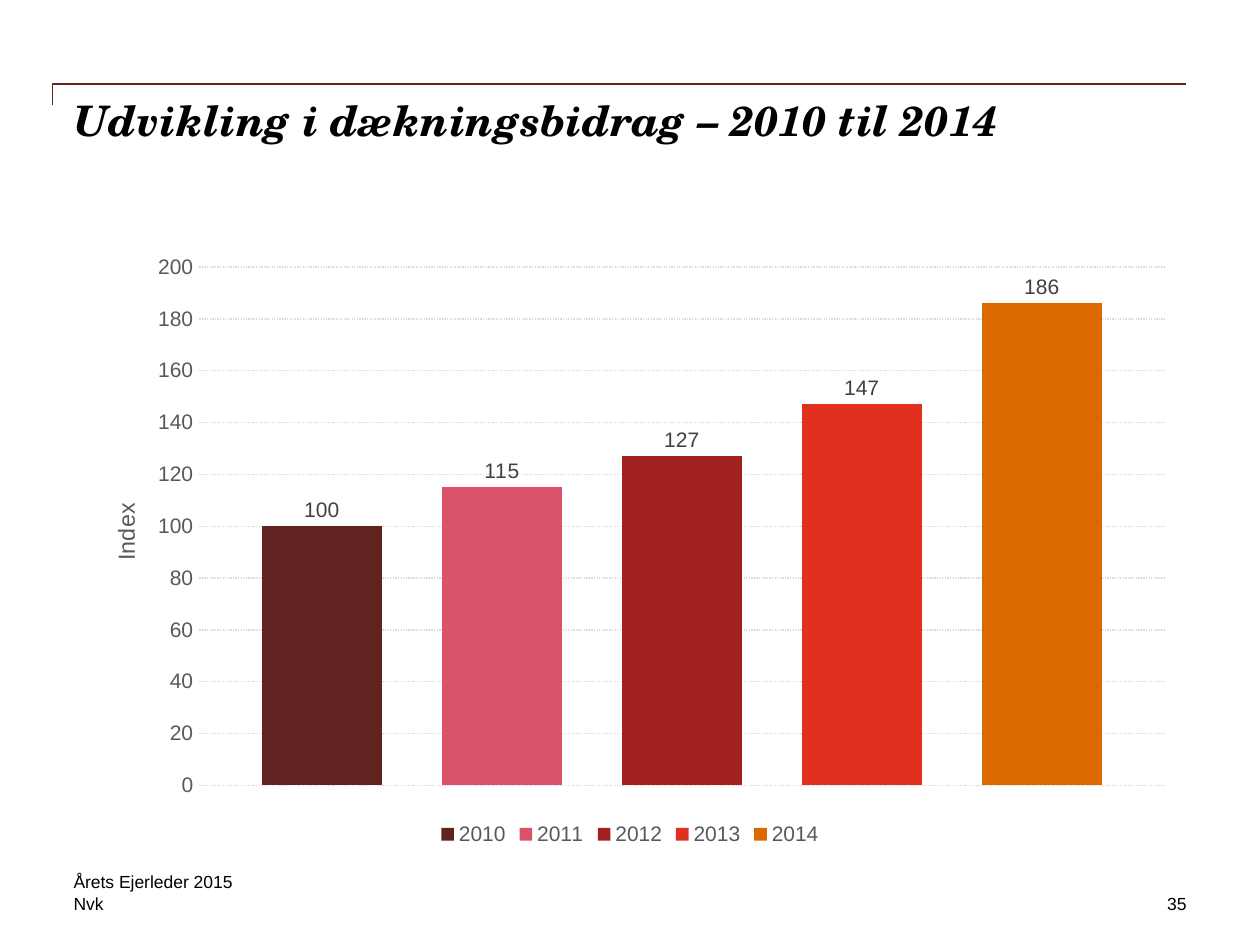
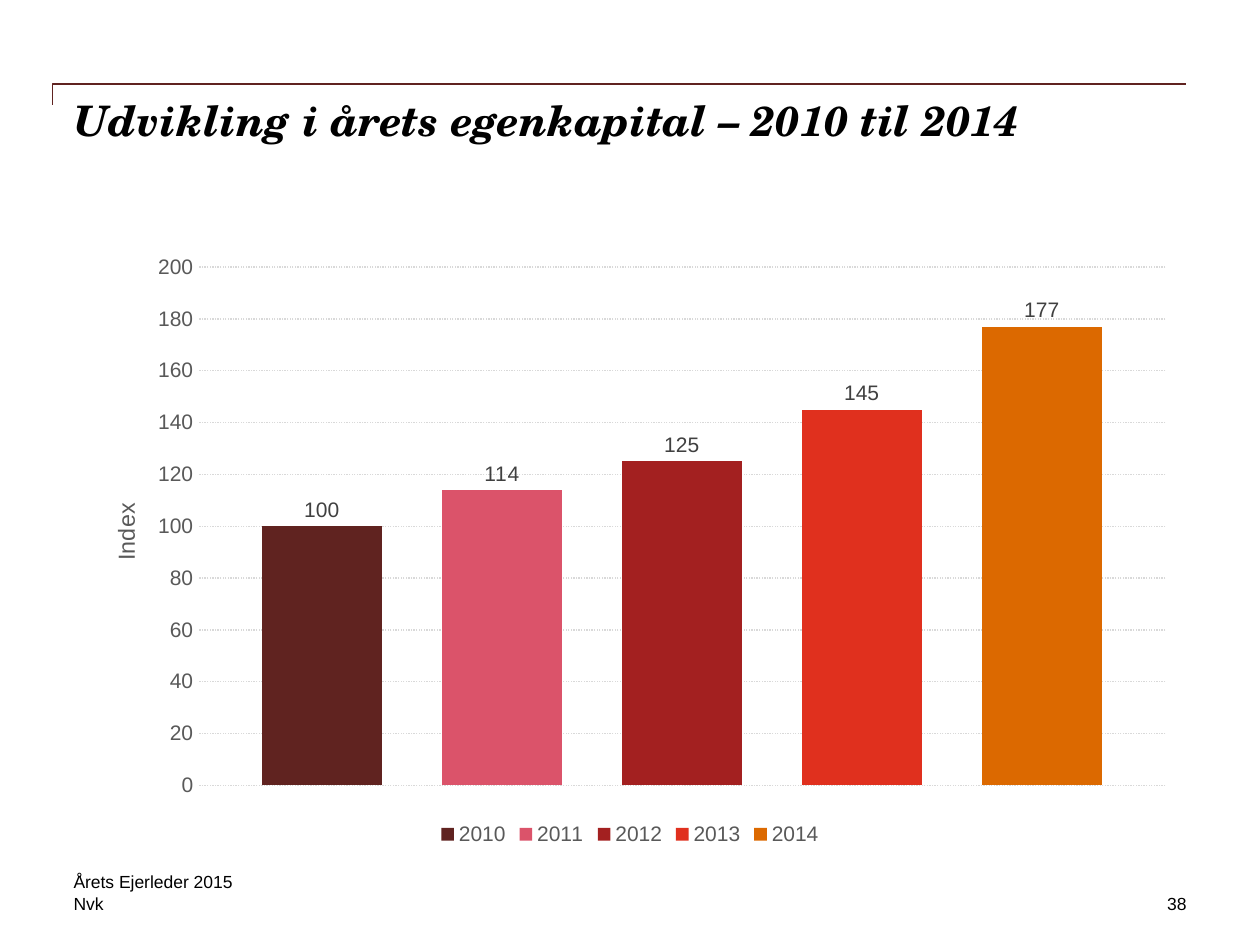
from typing import NamedTuple

from lxml.etree import SubElement, _Element
from pptx import Presentation
from pptx.chart.chart import Chart
from pptx.chart.data import CategoryChartData
from pptx.dml.color import RGBColor
from pptx.enum.chart import XL_CHART_TYPE as ChartType
from pptx.enum.chart import XL_LABEL_POSITION as LabelPosition
from pptx.enum.chart import XL_LEGEND_POSITION as LegendPosition
from pptx.enum.chart import XL_TICK_MARK as TickMark
from pptx.enum.dml import MSO_LINE as LineStyle
from pptx.enum.text import MSO_ANCHOR as Anchor
from pptx.enum.text import MSO_AUTO_SIZE as AutoSize
from pptx.enum.text import PP_ALIGN as Align
from pptx.oxml.ns import qn
from pptx.slide import Slide
from pptx.text.text import Font, TextFrame
from pptx.util import Inches, Pt

UNIT = Inches(1) / 12
COLUMNS, ROWS = 120, 90
BODY_FONT, TITLE_FONT = "Arial", "TeX Gyre Schola"
BLACK, AXIS_GREY, LABEL_GREY, GRID_GREY = "000000", "595959", "404040", "D9D9D9"
RULE_COLOR = "602320"
YEAR_COLORS = {
    "2010": "602320",
    "2011": "DB536A",
    "2012": "A32020",
    "2013": "E0301E",
    "2014": "DC6900",
}


class Box(NamedTuple):
    column: float
    row: float
    columns: float
    rows: float

    def lengths(self) -> list[int]:
        return [round(value * UNIT) for value in self]


class FooterText(NamedTuple):
    text: str
    box: Box
    anchor: Anchor = Anchor.TOP
    align: Align = Align.LEFT


class IndexSlide(NamedTuple):
    title: str
    page: str
    values: tuple[int, ...]


TITLE_BOX = Box(7, 9, 106, 12)
CHART_BOX = Box(7, 23.25, 106, 57.75)
RULE_POINTS = [(5, 10), (5, 8), (113, 8)]
FOOTERS = [
    FooterText("Årets Ejerleder 2015", Box(7, 83, 69, 2), Anchor.BOTTOM),
    FooterText("Nvk", Box(7, 85, 34, 2)),
]
PAGE_BOX = Box(93, 85, 20, 2)
SLIDES = [
    IndexSlide("Udvikling i dækningsbidrag – 2010 til 2014", "35", (100, 115, 127, 147, 186)),
    IndexSlide("Udvikling i årets egenkapital – 2010 til 2014", "38", (100, 114, 125, 145, 177)),
]


def rgb(color: str) -> RGBColor:
    return RGBColor.from_string(color)


def style_font(font: Font, size: float, color: str, name: str = BODY_FONT) -> None:
    font.name, font.size = name, Pt(size)
    font.color.rgb = rgb(color)


def prepare_frame(frame: TextFrame, anchor: Anchor) -> None:
    frame.margin_left = frame.margin_right = frame.margin_top = frame.margin_bottom = 0
    frame.word_wrap, frame.auto_size = True, AutoSize.NONE
    frame.vertical_anchor = anchor


def add_title(slide: Slide, text: str) -> None:
    title = slide.shapes.title
    title.left, title.top, title.width, title.height = TITLE_BOX.lengths()
    prepare_frame(title.text_frame, Anchor.TOP)
    title.text_frame.text = text
    paragraph = title.text_frame.paragraphs[0]
    paragraph.alignment = Align.LEFT
    style_font(paragraph.font, 24, BLACK, TITLE_FONT)
    paragraph.font.bold = paragraph.font.italic = True


def add_rule(slide: Slide) -> None:
    start, *corners = RULE_POINTS
    builder = slide.shapes.build_freeform(*start, scale=UNIT)
    builder.add_line_segments(corners, close=False)
    rule = builder.convert_to_shape()
    rule.shadow.inherit = False
    rule.fill.background()
    rule.line.color.rgb = rgb(RULE_COLOR)
    rule.line.width = Pt(1)


def add_footer(slide: Slide, footer: FooterText) -> None:
    frame = slide.shapes.add_textbox(*footer.box.lengths()).text_frame
    prepare_frame(frame, footer.anchor)
    paragraph = frame.paragraphs[0]
    paragraph.text, paragraph.alignment = footer.text, footer.align
    style_font(paragraph.font, 10, BLACK)


def set_layout(parent: _Element, index: int, **settings: object) -> None:
    for layout in parent.findall(qn("c:layout")):
        parent.remove(layout)
    layout = SubElement(parent, qn("c:layout"))
    parent.insert(index, layout)
    manual = SubElement(layout, qn("c:manualLayout"))
    for name, value in settings.items():
        SubElement(manual, qn(f"c:{name}")).set("val", str(value))


def format_value_axis(chart: Chart) -> None:
    axis = chart.value_axis
    axis.minimum_scale, axis.maximum_scale, axis.major_unit = 0, 200, 20
    axis.major_tick_mark = axis.minor_tick_mark = TickMark.NONE
    axis.format.line.fill.background()
    grid = axis.major_gridlines.format.line
    grid.color.rgb = rgb(GRID_GREY)
    grid.width, grid.dash_style = Pt(0.75), LineStyle.ROUND_DOT
    axis.tick_labels.number_format = "0"
    axis.tick_labels.number_format_is_linked = False
    style_font(axis.tick_labels.font, 12, AXIS_GREY)

    frame = axis.axis_title.text_frame
    frame.text = "Index"
    font = frame.paragraphs[0].font
    style_font(font, 13.3, AXIS_GREY)
    font.bold = False
    body = frame._txBody.find(qn("a:bodyPr"))
    body.set("rot", "-5400000")
    body.set("vert", "horz")
    set_layout(axis.axis_title._element, 1, xMode="edge", yMode="edge", x=0.03, y=0.42)


def add_index_chart(slide: Slide, values: tuple[int, ...]) -> None:
    data = CategoryChartData(number_format="0")
    data.categories = ["1"]
    for year, value in zip(YEAR_COLORS, values):
        data.add_series(year, [value])
    frame = slide.shapes.add_chart(ChartType.COLUMN_CLUSTERED, *CHART_BOX.lengths(), data)
    chart = frame.chart
    chart.has_title = False
    style_font(chart.font, 10, BLACK)
    chart.category_axis.visible = False
    format_value_axis(chart)

    chart.has_legend = True
    chart.legend.position = LegendPosition.BOTTOM
    chart.legend.include_in_layout = False
    style_font(chart.legend.font, 12, AXIS_GREY)

    plot = chart.plots[0]
    plot.gap_width, plot.overlap, plot.vary_by_categories = 106, -50, False
    for series, color in zip(plot.series, YEAR_COLORS.values()):
        series.format.fill.solid()
        series.format.fill.fore_color.rgb = rgb(color)
        labels = series.data_labels
        labels.show_value, labels.position = True, LabelPosition.OUTSIDE_END
        labels.number_format, labels.number_format_is_linked = "0", False
        style_font(labels.font, 12, LABEL_GREY)
    set_layout(
        chart._chartSpace.chart.plotArea, 0, layoutTarget="inner",
        xMode="edge", yMode="edge", x=0.112, y=0.038, w=0.869, h=0.855,
    )


def main() -> None:
    presentation = Presentation()
    presentation.slide_width = round(COLUMNS * UNIT)
    presentation.slide_height = round(ROWS * UNIT)
    for content in SLIDES:
        slide = presentation.slides.add_slide(presentation.slide_layouts[5])
        add_rule(slide)
        add_title(slide, content.title)
        add_index_chart(slide, content.values)
        page = FooterText(content.page, PAGE_BOX, align=Align.RIGHT)
        for footer in [*FOOTERS, page]:
            add_footer(slide, footer)
    presentation.save("out.pptx")


if __name__ == "__main__":
    main()
